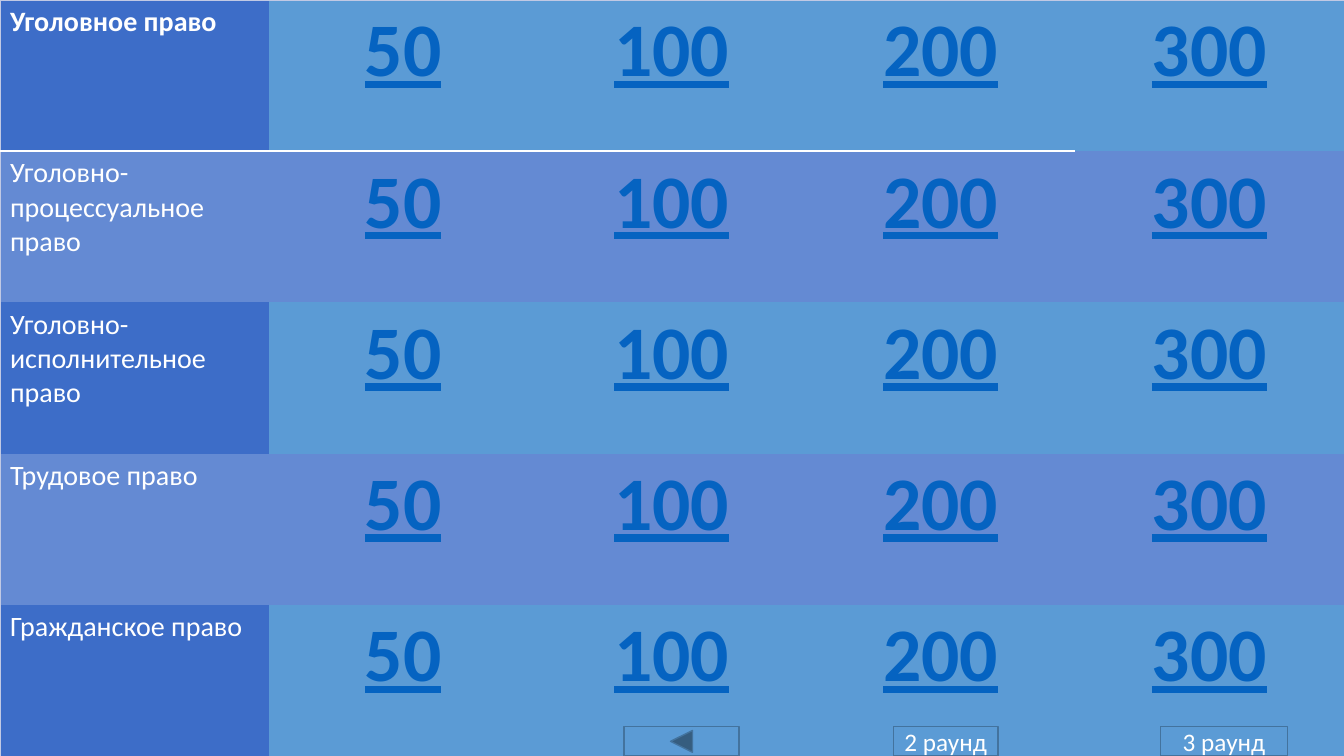
import pptx
import pptx.util
import pptx.dml.color
import pptx.enum.shapes
import pptx.enum.text
import pptx.oxml
import pptx.oxml.ns
from dataclasses import dataclass

Inches = pptx.util.Inches
Pt = pptx.util.Pt
SHAPES = pptx.enum.shapes.MSO_SHAPE
ALIGN = pptx.enum.text.PP_ALIGN


@dataclass(frozen=True)
class Theme:
    font: str = "Calibri"
    topic_fill: str = "3D6DC8"
    tinted_fill: str = "648AD3"
    score_fill: str = "5B9BD5"
    button_line: str = "43739E"
    edge: str = "C1C9E4"
    text: str = "FFFFFF"
    score: str = "0563C1"
    topic_size: int = 20
    score_size: int = 54
    button_size: int = 18


THEME = Theme()
PAGE_WIDTH, PAGE_HEIGHT = 13.33, 7.5
PLAIN_TABLE_STYLE = "{2D5ABB26-0587-4C30-8999-92F81FD0307C}"
TOPICS = [
    "Уголовное право",
    "Уголовно-процессуальное право",
    "Уголовно-исполнительное право",
    "Трудовое право",
    "Гражданское право",
]
SCORES = ["50", "100", "200", "300"]
# Preset shape, label, left, width
BUTTONS = [
    (SHAPES.ACTION_BUTTON_CUSTOM, "2 раунд", 8.86, 1.04),
    (SHAPES.ACTION_BUTTON_CUSTOM, "3 раунд", 11.51, 1.26),
    (SHAPES.ACTION_BUTTON_BACK_OR_PREVIOUS, "", 6.19, 1.14),
]


def color(code):
    return pptx.dml.color.RGBColor.from_string(code)


def paint(fill, code):
    fill.solid()
    fill.fore_color.rgb = color(code)


def write(frame, text, size, code, align, bold=False, underline=False):
    frame.text = text
    para = frame.paragraphs[0]
    para.alignment = align
    for span in para.runs:
        span.font.name = THEME.font
        span.font.size = Pt(size)
        span.font.color.rgb = color(code)
        span.font.bold = bold
        span.font.underline = underline


def add_border(cell, side, code, width):
    cell._tc.get_or_add_tcPr().append(pptx.oxml.parse_xml(
        f'<a:ln{side} {pptx.oxml.ns.nsdecls("a")} w="{int(Pt(width))}">'
        f'<a:solidFill><a:srgbClr val="{code}"/></a:solidFill></a:ln{side}>'))


def draw_borders(cell, row, column):
    """Thin outer frame, with a white rule under the first row."""
    last_row, last_column = len(TOPICS) - 1, len(SCORES)
    outer = {"L": column == 0, "R": column == last_column,
             "T": row == 0, "B": row == last_row}
    for side, on_edge in outer.items():
        if on_edge:
            add_border(cell, side, THEME.edge, 0.5)
    if row == 0 and column < last_column:
        add_border(cell, "B", THEME.text, 1.5)


def add_board(page, left, top, width, height):
    frame = page.shapes.add_table(
        len(TOPICS), len(SCORES) + 1,
        Inches(left), Inches(top), Inches(width), Inches(height))
    board = frame.table
    board._tbl.tblPr.find(pptx.oxml.ns.qn("a:tableStyleId")).text = PLAIN_TABLE_STYLE
    for column in board.columns:
        column.width = Inches(width / len(board.columns))

    for row, topic in enumerate(TOPICS):
        board.rows[row].height = Inches(height / len(TOPICS))
        for column, text in enumerate([topic] + SCORES):
            cell = board.cell(row, column)
            draw_borders(cell, row, column)
            if row % 2:
                paint(cell.fill, THEME.tinted_fill)
            else:
                paint(cell.fill, THEME.score_fill if column else THEME.topic_fill)
            if column:
                write(cell.text_frame, text, THEME.score_size, THEME.score,
                      ALIGN.CENTER, bold=True, underline=True)
            else:
                write(cell.text_frame, text, THEME.topic_size, THEME.text,
                      ALIGN.LEFT, bold=row == 0)


def add_button(page, preset, label, left, top, width, height):
    button = page.shapes.add_shape(
        preset, Inches(left), Inches(top), Inches(width), Inches(height))
    button.shadow.inherit = False
    paint(button.fill, THEME.score_fill)
    button.line.color.rgb = color(THEME.button_line)
    button.line.width = Pt(1)
    if label:
        frame = button.text_frame
        frame.margin_left = frame.margin_right = 0
        frame.margin_top = frame.margin_bottom = 0
        frame.vertical_anchor = pptx.enum.text.MSO_ANCHOR.MIDDLE
        write(frame, label, THEME.button_size, THEME.text, ALIGN.CENTER)


def build_quiz_page(deck):
    page = deck.slides.add_slide(deck.slide_layouts[6])
    # Question board
    add_board(page, 0, 0, PAGE_WIDTH, PAGE_HEIGHT)
    # Round buttons along the bottom edge
    height = 0.29
    for preset, label, left, width in BUTTONS:
        add_button(page, preset, label, left, PAGE_HEIGHT - height, width, height)


def main():
    deck = pptx.Presentation()
    deck.slide_width = Inches(PAGE_WIDTH)
    deck.slide_height = Inches(PAGE_HEIGHT)
    build_quiz_page(deck)
    deck.save("out.pptx")


if __name__ == "__main__":
    main()
